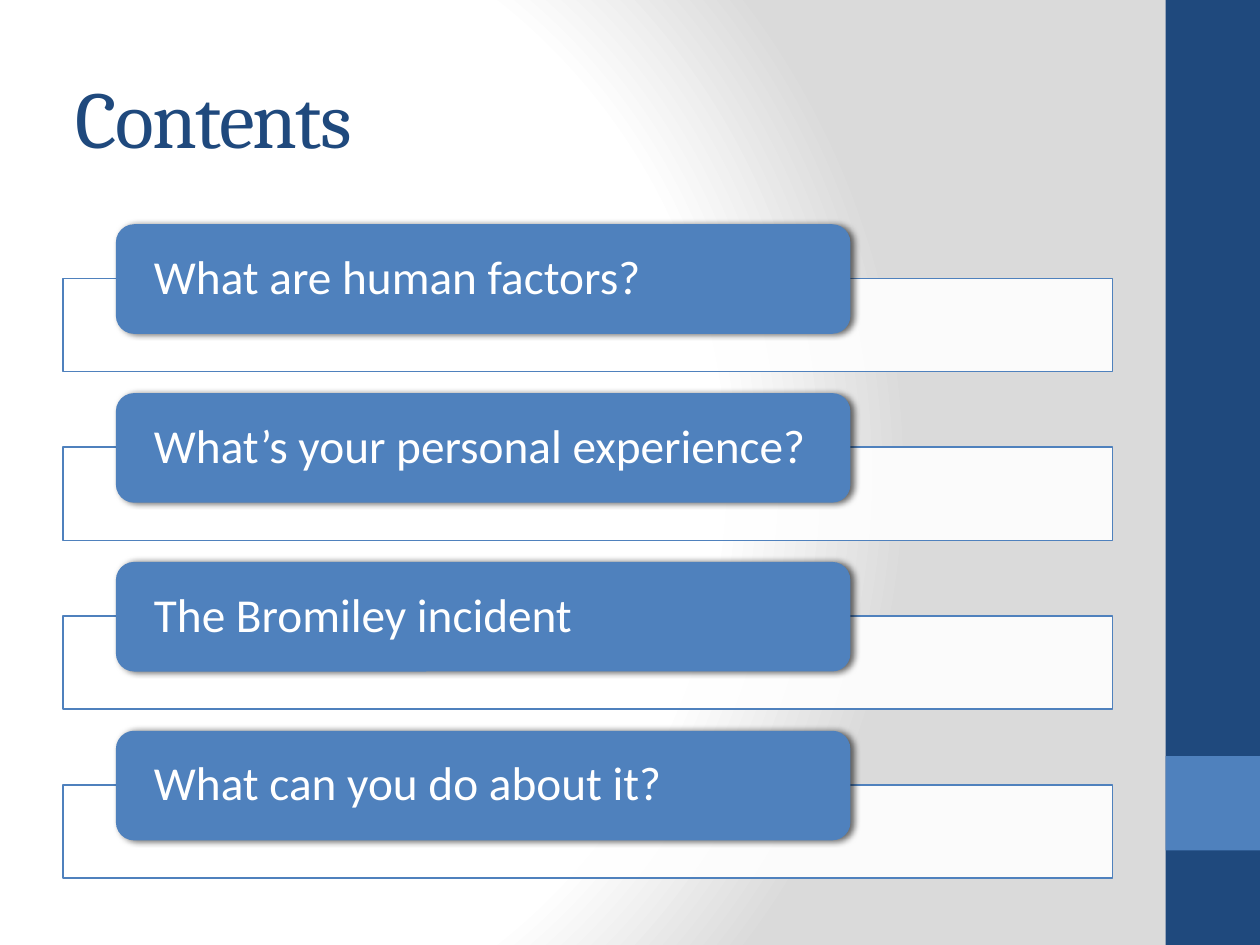
"""Build the Contents slide with four agenda bars."""
from lxml.etree import SubElement
from pptx import Presentation
from pptx.dml.color import RGBColor
from pptx.enum.shapes import MSO_SHAPE as SHAPE
from pptx.enum.text import MSO_ANCHOR as ANCHOR, PP_ALIGN as ALIGN
from pptx.oxml import parse_xml
from pptx.oxml.ns import nsdecls, qn
from pptx.util import Inches, Pt

NAVY = RGBColor(0x1F, 0x49, 0x7D)
BLUE = RGBColor(0x4F, 0x81, 0xBD)
WHITE = RGBColor(0xFF, 0xFF, 0xFF)
BLACK = RGBColor(0x00, 0x00, 0x00)
GRAY = RGBColor(0xDA, 0xDA, 0xDA)

TITLE_FONT = {"name": "Cambria", "size": Pt(46)}
ITEM_FONT = {"name": "Calibri", "size": Pt(27)}
TITLE_FRAME = {"word_wrap": True, "vertical_anchor": ANCHOR.MIDDLE}
ITEM_FRAME = {
    **TITLE_FRAME,
    "margin_left": Inches(0.26),
    "margin_right": Inches(0.26),
    "margin_top": Inches(0.04),
    "margin_bottom": Inches(0.04),
}
TOPICS = [
    "What are human factors?",
    "What’s your personal experience?",
    "The Bromiley incident",
    "What can you do about it?",
]
FIRST_TOP, PITCH = 1.78, 1.34


def add_box(s, kind, left, top, width, height, color):
    sp = s.shapes.add_shape(
        kind, Inches(left), Inches(top), Inches(width), Inches(height))
    sp.shadow.inherit = False
    sp.fill.solid()
    sp.fill.fore_color.rgb = color
    sp.line.fill.background()
    return sp


def write_text(sp, text, frame, font, color):
    tf = sp.text_frame
    for name, value in frame.items():
        setattr(tf, name, value)
    p = tf.paragraphs[0]
    p.alignment = ALIGN.LEFT
    r = p.add_run()
    r.text = text
    for name, value in font.items():
        setattr(r.font, name, value)
    r.font.color.rgb = color
    return p, r


prs = Presentation()
prs.slide_width, prs.slide_height = Inches(10), Inches(7.5)
s = prs.slides.add_slide(prs.slide_layouts[6])

s.background.fill.gradient()
grad = s.element.find(".//" + qn("a:gradFill"))
stops = "".join(
    f'<a:gs pos="{pos * 1000}"><a:srgbClr val="{color}"/></a:gs>'
    for pos, color in [(0, WHITE), (75, WHITE), (100, GRAY)])
grad.getparent().replace(grad, parse_xml(
    f'<a:gradFill {nsdecls("a")} rotWithShape="1"><a:gsLst>{stops}</a:gsLst>'
    '<a:path path="circle"><a:fillToRect l="20000" t="50000" r="100000" b="50000"/>'
    '</a:path></a:gradFill>'))

add_box(s, SHAPE.RECTANGLE, 9.25, 0, 0.75, 7.5, NAVY)
add_box(s, SHAPE.RECTANGLE, 9.25, 6, 0.75, 0.75, BLUE)

title = s.shapes.add_textbox(Inches(0.5), Inches(0.3), Inches(8.33), Inches(1.25))
p, r = write_text(title, "Contents", TITLE_FRAME, TITLE_FONT, NAVY)
r.font._element.set("spc", "-100")

for i, topic in enumerate(TOPICS):
    top = FIRST_TOP + i * PITCH

    panel = add_box(s, SHAPE.RECTANGLE, 0.5, top + 0.43, 8.33, 0.74, WHITE)
    panel.line.color.rgb = BLUE
    panel.line.width = Pt(1)
    panel_color = panel.fill._xPr.find(qn("a:solidFill"))[0]
    SubElement(panel_color, qn("a:alpha"), val="90000")

    label = add_box(s, SHAPE.ROUNDED_RECTANGLE, 0.92, top, 5.83, 0.87, BLUE)
    effects = label.element.spPr.find(qn("a:effectLst"))
    shadow = SubElement(
        effects, qn("a:outerShdw"), blurRad=str(Pt(4)), dist=str(Pt(2)),
        dir="0", rotWithShape="0")
    shadow_color = SubElement(shadow, qn("a:srgbClr"), val=str(BLACK))
    SubElement(shadow_color, qn("a:alpha"), val="60000")
    p, r = write_text(label, topic, ITEM_FRAME, ITEM_FONT, WHITE)
    p.line_spacing = 0.9

prs.save("out.pptx")
